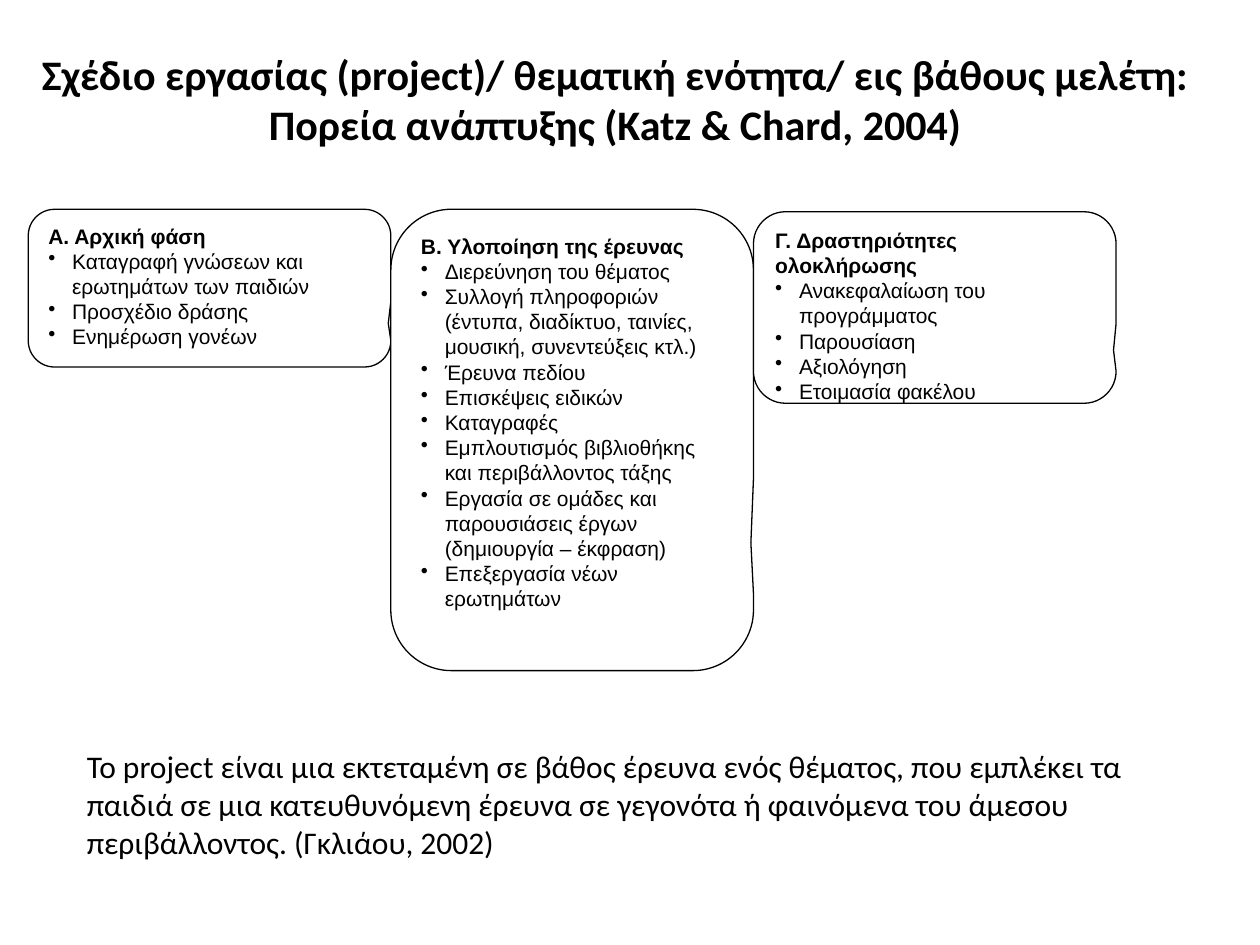
import pptx
import pptx.dml.color
import pptx.enum.shapes
import pptx.enum.text
import pptx.oxml.ns
import pptx.util
from lxml import etree

Cm, Pt = pptx.util.Cm, pptx.util.Pt
RGB = pptx.dml.color.RGBColor
ALIGN = pptx.enum.text.PP_ALIGN
ANCHOR = pptx.enum.text.MSO_ANCHOR

THEME = {
    "ink": RGB(0, 0, 0),
    "paper": RGB(255, 255, 255),
    "title": {"name": "Calibri", "size": Pt(24), "bold": True},
    "heading": {"name": "Arial", "size": Pt(12), "bold": True},
    "item": {"name": "Arial", "size": Pt(12), "bold": False},
    "quote": {"name": "Calibri", "size": Pt(18), "bold": False},
}

TITLE = ("Σχέδιο εργασίας (project)/ θεματική ενότητα/ εις βάθους μελέτη:\v"
         "Πορεία ανάπτυξης (Katz & Chard, 2004)")
QUOTE = ("To project είναι μια εκτεταμένη σε βάθος έρευνα ενός θέματος, που εμπλέκει τα "
         "παιδιά σε μια κατευθυνόμενη έρευνα σε γεγονότα ή φαινόμενα του άμεσου "
         "περιβάλλοντος. (Γκλιάου, 2002)")

# Each phase: top and height in cm, heading, items
PHASES = [
    (4.22, 3.18, "Α. Αρχική φάση", [
        "Καταγραφή γνώσεων και ερωτημάτων των παιδιών",
        "Προσχέδιο δράσης",
        "Ενημέρωση γονέων"]),
    (4.22, 9.3, "Β. Υλοποίηση της έρευνας", [
        "Διερεύνηση του θέματος",
        "Συλλογή πληροφοριών (έντυπα, διαδίκτυο, ταινίες, μουσική, συνεντεύξεις κτλ.)",
        "Έρευνα πεδίου",
        "Επισκέψεις ειδικών",
        "Καταγραφές",
        "Εμπλουτισμός βιβλιοθήκης και περιβάλλοντος τάξης",
        "Εργασία σε ομάδες και παρουσιάσεις έργων (δημιουργία – έκφραση)",
        "Επεξεργασία νέων ερωτημάτων"]),
    (4.27, 3.86, "Γ. Δραστηριότητες ολοκλήρωσης", [
        "Ανακεφαλαίωση του προγράμματος",
        "Παρουσίαση",
        "Αξιολόγηση",
        "Ετοιμασία φακέλου"]),
]


def write(p, text, style, align=ALIGN.LEFT):
    p.text = text
    p.alignment = align
    for r in p.runs:
        for key, value in THEME[style].items():
            setattr(r.font, key, value)
        r.font.color.rgb = THEME["ink"]


def add_bullet(p, indent):
    pPr = p._p.get_or_add_pPr()
    pPr.set("marL", str(indent))
    pPr.set("indent", str(-indent))
    bullet = etree.SubElement(pPr, pptx.oxml.ns.qn("a:buChar"))
    bullet.set("char", "•")


def add_text(s, box, text, style, align=ALIGN.LEFT, anchor=ANCHOR.TOP):
    tf = s.shapes.add_textbox(*box).text_frame
    tf.word_wrap = True
    tf.vertical_anchor = anchor
    write(tf.paragraphs[0], text, style, align)


def add_phase(s, box, heading, items):
    sp = s.shapes.add_shape(
        pptx.enum.shapes.MSO_SHAPE.ROUNDED_RECTANGULAR_CALLOUT, *box)
    for i, value in enumerate((0.493, 0.223, 0.167)):
        sp.adjustments[i] = value
    sp.shadow.inherit = False
    sp.fill.solid()
    sp.fill.fore_color.rgb = THEME["paper"]
    sp.line.color.rgb = THEME["ink"]
    sp.line.width = Pt(0.75)

    tf = sp.text_frame
    tf.word_wrap = True
    tf.vertical_anchor = ANCHOR.TOP
    write(tf.paragraphs[0], heading, "heading")
    for item in items:
        p = tf.add_paragraph()
        add_bullet(p, Cm(0.48))
        write(p, item, "item")


def add_phases(s, left, width):
    for i, (top, height, heading, items) in enumerate(PHASES):
        add_phase(s, (left + i * width, Cm(top), width, Cm(height)), heading, items)


def main():
    prs = pptx.Presentation()
    prs.slide_width, prs.slide_height = Cm(25.4), Cm(19.05)
    s = prs.slides.add_slide(prs.slide_layouts[6])

    # Title
    add_text(s, (Cm(0), Cm(0.74), Cm(24.8), Cm(2.51)), TITLE, "title",
             ALIGN.CENTER, ANCHOR.MIDDLE)
    # Three phases side by side
    add_phases(s, Cm(0.57), Cm(7.31))
    # Closing quotation
    add_text(s, (Cm(1.5), Cm(14.94), Cm(21.74), Cm(2.57)), QUOTE, "quote")

    prs.save("out.pptx")


if __name__ == "__main__":
    main()
